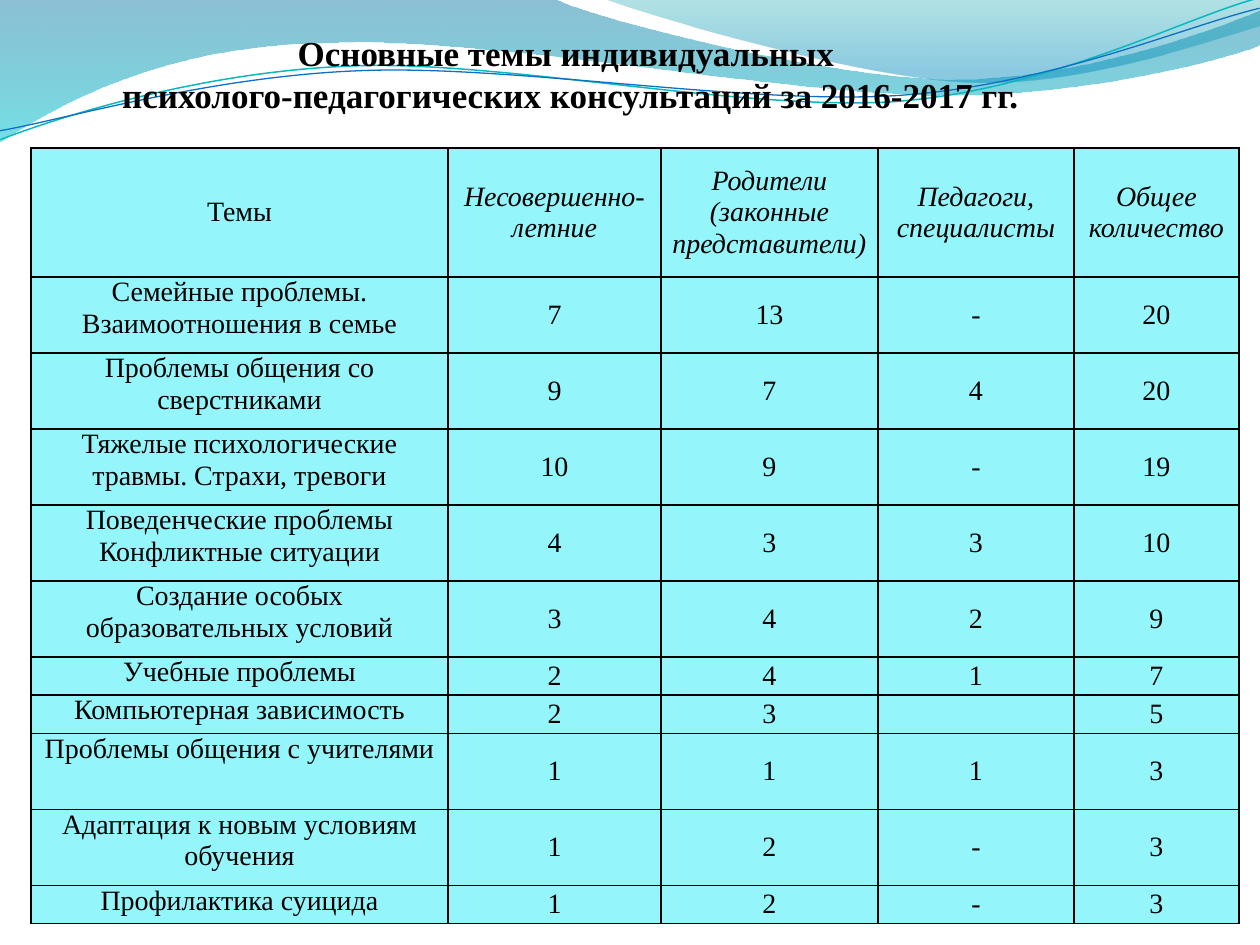
"""Build a slide with a table of consultation topics under a wavy header."""
from dataclasses import dataclass

from lxml import etree
from pptx import Presentation
from pptx import util as u
from pptx.dml.color import RGBColor
from pptx.enum import text
from pptx.oxml.ns import qn

PX = 914400 / 126
FONT = "Times New Roman"
BLACK = "000000"
CELL_FILL = "94F5FA"
LINE_TILT = 357.3

Point = tuple[int, int]


@dataclass(frozen=True)
class Stop:
    position: float
    color: str
    opacity: int


@dataclass(frozen=True)
class Wave:
    start: Point
    segments: list[tuple[Point, ...]]
    stops: tuple[Stop, ...] = ()
    line: str = ""
    width: float = 0


@dataclass(frozen=True)
class Topic:
    name: str
    height: int
    counts: tuple[str, ...]


WAVES = [
    Wave((0, 0), [
        ((554, -1),),
        ((600, 21), (837, 79), (955, 79)),
        ((1075, 79), (1207, 33), (1260, 11)),
        ((1261, 45),),
        ((1239, 55), (1096, 96), (940, 95)),
        ((784, 95), (481, 35), (324, 43)),
        ((163, 45), (58, 105), (-1, 142)),
        ((0, 0),),
    ], stops=(Stop(0, "0074A1", 45), Stop(1, "00C6CF", 55))),
    Wave((604, -1), [
        ((641, 14), (859, 78), (969, 82)),
        ((1079, 87), (1211, 40), (1260, 26)),
        ((1260, 0),),
        ((604, -1),),
    ], stops=(Stop(0, "00A1A9", 30), Stop(0.8, "008BBF", 45))),
    Wave((-2, 110), [
        ((58, 90), (199, 52), (350, 53)),
        ((499, 53), (745, 118), (896, 114)),
        ((1049, 109), (1184, 45), (1260, 28)),
    ], line="0AB8BF", width=0.85),
    Wave((-2, 101), [
        ((57, 94), (207, 57), (357, 58)),
        ((509, 58), (750, 112), (902, 108)),
        ((1052, 104), (1188, 52), (1262, 38)),
    ], line="0F6FC6", width=0.75),
]

TITLE = ("Основные темы индивидуальных ",
         "психолого-педагогических консультаций за 2016-2017 гг.")
COLUMNS = (417, 213, 217, 196, 165)
TOPICS = [
    Topic("Темы", 129, ("Несовершенно-летние", "Родители (законные представители)",
                        "Педагоги, специалисты", "Общее количество")),
    Topic("Семейные проблемы. Взаимоотношения в семье", 76, ("7", "13", "-", "20")),
    Topic("Проблемы общения со сверстниками", 76, ("9", "7", "4", "20")),
    Topic("Тяжелые психологические травмы. Страхи, тревоги", 76, ("10", "9", "-", "19")),
    Topic("Поведенческие проблемы\nКонфликтные ситуации", 76, ("4", "3", "3", "10")),
    Topic("Создание особых образовательных условий", 76, ("3", "4", "2", "9")),
    Topic("Учебные проблемы", 38, ("2", "4", "1", "7")),
    Topic("Компьютерная зависимость", 38, ("2", "3", "", "5")),
    Topic("Проблемы общения с учителями", 76, ("1", "1", "1", "3")),
    Topic("Адаптация к новым условиям обучения", 76, ("1", "2", "-", "3")),
    Topic("Профилактика суицида", 38, ("1", "2", "-", "3")),
]


def px(value: int) -> u.Emu:
    """Turn pixels into EMU."""
    return u.Emu(round(value * PX))


def rgb(color: str) -> RGBColor:
    """Turn a hex string into a colour."""
    return RGBColor.from_string(color)


def bend(sp, segments: list[tuple[Point, ...]]) -> None:
    """Join the points of each three-point segment into a cubic curve."""
    points = iter(list(sp._element.spPr.iter(qn("a:lnTo"))))
    for segment in segments:
        steps = [next(points) for _ in segment]
        if len(steps) == 3:
            curve = etree.Element(qn("a:cubicBezTo"))
            steps[0].addprevious(curve)
            for step in steps:
                curve.append(step[0])
                step.getparent().remove(step)


def add_wave(s, wave: Wave) -> None:
    """Draw a wave as a gradient band or as a thin tilted line."""
    x, y = wave.start
    builder = s.shapes.build_freeform(px(x), px(y))
    points = [(px(x), px(y)) for segment in wave.segments for x, y in segment]
    builder.add_line_segments(points, close=bool(wave.stops))
    sp = builder.convert_to_shape()
    bend(sp, wave.segments)
    sp.shadow.inherit = False
    if not wave.stops:
        sp.rotation = LINE_TILT
        sp.fill.background()
        sp.line.color.rgb = rgb(wave.line)
        sp.line.width = u.Pt(wave.width)
        return
    sp.line.fill.background()
    sp.fill.gradient()
    sp.fill.gradient_angle = 270
    for target, stop in zip(sp.fill.gradient_stops, wave.stops):
        target.position = stop.position
        target.color.rgb = rgb(stop.color)
    for color, stop in zip(sp._element.spPr.iter(qn("a:srgbClr")), wave.stops):
        etree.SubElement(color, qn("a:alpha"), val=str(stop.opacity * 1000))


def add_run(p, content: str, size: int, bold: bool = False, italic: bool = False) -> None:
    """Add a black run to a paragraph."""
    r = p.add_run()
    r.text = content
    r.font.name, r.font.size = FONT, u.Pt(size)
    r.font.bold, r.font.italic = bold, italic
    r.font.color.rgb = rgb(BLACK)


def set_title(s) -> None:
    """Place and fill the title placeholder in front of the waves."""
    sp = s.shapes.title
    sp.left, sp.top, sp.width, sp.height = px(25), px(26), px(1091), px(90)
    s.shapes._spTree.append(sp._element)
    tf = sp.text_frame
    tf.auto_size = text.MSO_AUTO_SIZE.NONE
    tf.word_wrap = True
    tf.vertical_anchor = text.MSO_ANCHOR.BOTTOM
    tf.margin_left = tf.margin_right = tf.margin_bottom = 0
    tf.margin_top = px(6)
    p = tf.paragraphs[0]
    p.alignment = text.PP_ALIGN.CENTER
    add_run(p, TITLE[0], 20, bold=True)
    p.add_line_break()
    add_run(p, TITLE[1], 20, bold=True)


def fill_cell(cell, content: str, anchor: text.MSO_ANCHOR, italic: bool) -> None:
    """Write and format one bordered table cell."""
    tc_pr = cell._tc.get_or_add_tcPr()
    for side in ("lnL", "lnR", "lnT", "lnB"):
        ln = etree.SubElement(tc_pr, qn(f"a:{side}"), w=str(u.Pt(1)))
        solid = etree.SubElement(ln, qn("a:solidFill"))
        etree.SubElement(solid, qn("a:srgbClr"), val=BLACK)
    cell.fill.solid()
    cell.fill.fore_color.rgb = rgb(CELL_FILL)
    cell.margin_left = cell.margin_right = px(9)
    cell.margin_top = cell.margin_bottom = 0
    cell.vertical_anchor = anchor
    tf = cell.text_frame
    for i, line in enumerate(content.split("\n")):
        p = tf.add_paragraph() if i else tf.paragraphs[0]
        p.alignment = text.PP_ALIGN.CENTER
        if line:
            add_run(p, line, 16, italic=italic)


def add_topics(s) -> None:
    """Add the table of topics and counts."""
    height = sum(topic.height for topic in TOPICS)
    table = s.shapes.add_table(len(TOPICS), len(COLUMNS), px(31), px(148),
                               px(sum(COLUMNS)), px(height)).table
    table.first_row = table.horz_banding = False
    for column, width in zip(table.columns, COLUMNS):
        column.width = px(width)
    for i, topic in enumerate(TOPICS):
        table.rows[i].height = px(topic.height)
        for j, content in enumerate((topic.name, *topic.counts)):
            top = i > 0 and j == 0
            anchor = text.MSO_ANCHOR.TOP if top else text.MSO_ANCHOR.MIDDLE
            fill_cell(table.cell(i, j), content, anchor, italic=i == 0 and j > 0)


def main() -> None:
    """Build and save the slide."""
    prs = Presentation()
    prs.slide_width, prs.slide_height = px(1260), px(945)
    s = prs.slides.add_slide(prs.slide_layouts[5])
    for wave in WAVES:
        add_wave(s, wave)
    set_title(s)
    add_topics(s)
    prs.save("out.pptx")


if __name__ == "__main__":
    main()
